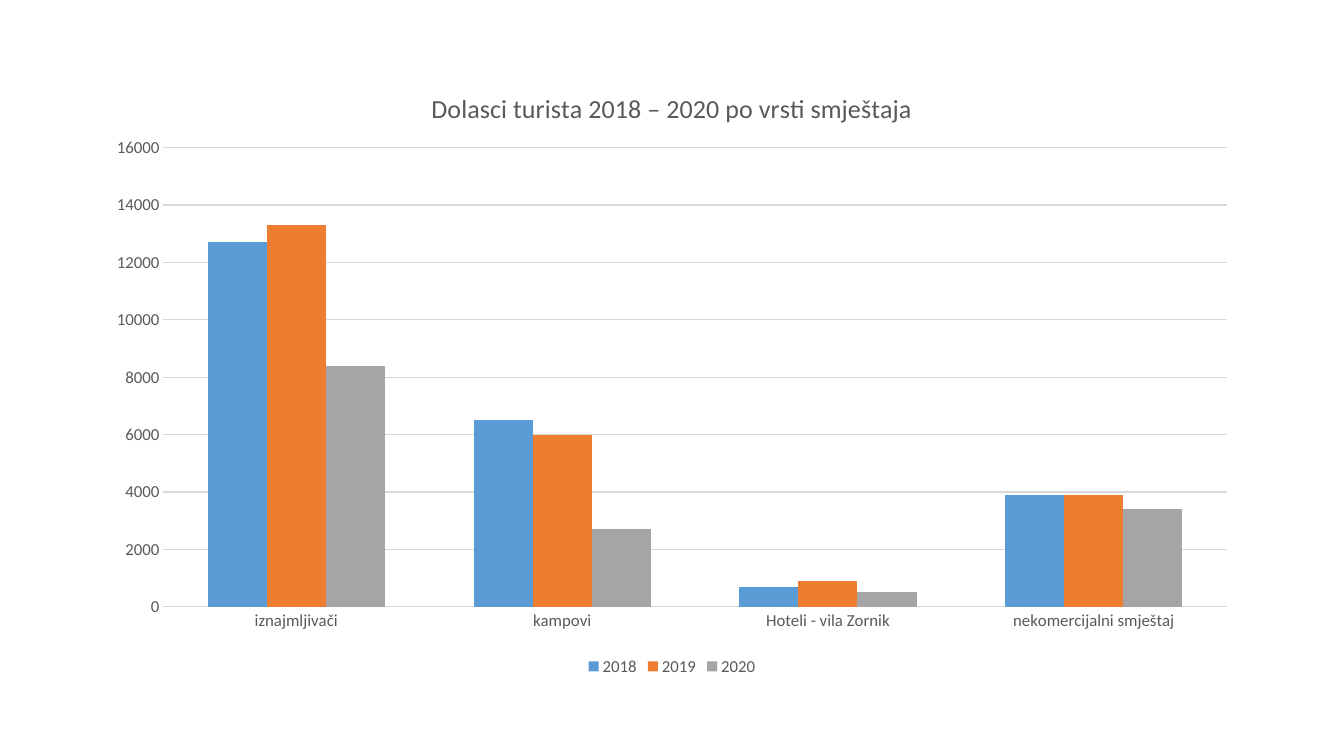
from lxml.etree import SubElement
from pptx import Presentation
from pptx.chart.data import CategoryChartData
from pptx.dml.color import RGBColor
from pptx.enum.chart import XL_CHART_TYPE, XL_LEGEND_POSITION, XL_TICK_MARK
from pptx.oxml.ns import qn
from pptx.util import Inches, Pt

WIDE, HIGH = Inches(13.33), Inches(7.5)
FACE = "Calibri"
COLORS = {
    "text": "595959",
    "grid": "D9D9D9",
    "2018": "5B9BD5",
    "2019": "ED7D31",
    "2020": "A5A5A5",
}
KINDS = ["iznajmljivači", "kampovi", "Hoteli - vila Zornik", "nekomercijalni smještaj"]
GUESTS = {
    "2018": [12700, 6500, 700, 3900],
    "2019": [13300, 6000, 900, 3900],
    "2020": [8400, 2700, 500, 3400],
}


def color(name):
    return RGBColor.from_string(COLORS[name])


def style(font, size):
    font.name = FACE
    font.size = Pt(size)
    font.bold = False
    font.color.rgb = color("text")


def add_bars(slide, left, top, width, height):
    """Add the clustered columns; the box is given as shares of the slide."""
    data = CategoryChartData()
    data.categories = KINDS
    for year, counts in GUESTS.items():
        data.add_series(year, counts)
    frame = slide.shapes.add_chart(
        XL_CHART_TYPE.COLUMN_CLUSTERED,
        int(WIDE * left), int(HIGH * top), int(WIDE * width), int(HIGH * height),
        data,
    )
    chart = frame.chart
    style(chart.font, 12)
    plot = chart.plots[0]
    plot.gap_width = 150
    plot.overlap = 0
    plot.vary_by_categories = False
    for bars in plot.series:
        bars.format.fill.solid()
        bars.format.fill.fore_color.rgb = color(bars.name)
    return chart


def set_title(chart, text):
    chart.has_title = True
    title = chart.chart_title
    title.include_in_layout = False
    line = title.text_frame.paragraphs[0]
    line.text = text
    style(line.runs[0].font, 18.6)


def set_axes(chart, top, step):
    for axis in (chart.category_axis, chart.value_axis):
        axis.major_tick_mark = XL_TICK_MARK.NONE
        axis.minor_tick_mark = XL_TICK_MARK.NONE
        axis.format.line.fill.background()
        style(axis.tick_labels.font, 12)
    scale = chart.value_axis
    scale.minimum_scale = 0
    scale.maximum_scale = top
    scale.major_unit = step
    scale.has_major_gridlines = True
    grid = scale.major_gridlines.format.line
    grid.color.rgb = color("grid")
    grid.width = Pt(0.75)


def set_legend(chart):
    chart.has_legend = True
    chart.legend.position = XL_LEGEND_POSITION.BOTTOM
    chart.legend.include_in_layout = False
    style(chart.legend.font, 12)


def place_plot(chart, **box):
    """Fix the inner plot area as shares of the chart."""
    area = chart.element.find(".//" + qn("c:plotArea"))
    layout = area.find(qn("c:layout"))
    if layout is None:
        layout = SubElement(area, qn("c:layout"))
        area.insert(0, layout)
    manual = SubElement(layout, qn("c:manualLayout"))
    rules = {"layoutTarget": "inner", "xMode": "edge", "yMode": "edge", **box}
    for tag, value in rules.items():
        SubElement(manual, qn("c:" + tag)).set("val", str(value))


def main():
    deck = Presentation()
    deck.slide_width, deck.slide_height = WIDE, HIGH
    slide = deck.slides.add_slide(deck.slide_layouts[6])
    chart = add_bars(slide, 0.07, 0.09, 0.86, 0.81)
    set_title(chart, "Dolasci turista 2018 – 2020 po vrsti smještaja")
    set_axes(chart, 16000, 2000)
    set_legend(chart)
    place_plot(chart, x=0.06, y=0.13, w=0.92, h=0.75)
    deck.save("out.pptx")


if __name__ == "__main__":
    main()
